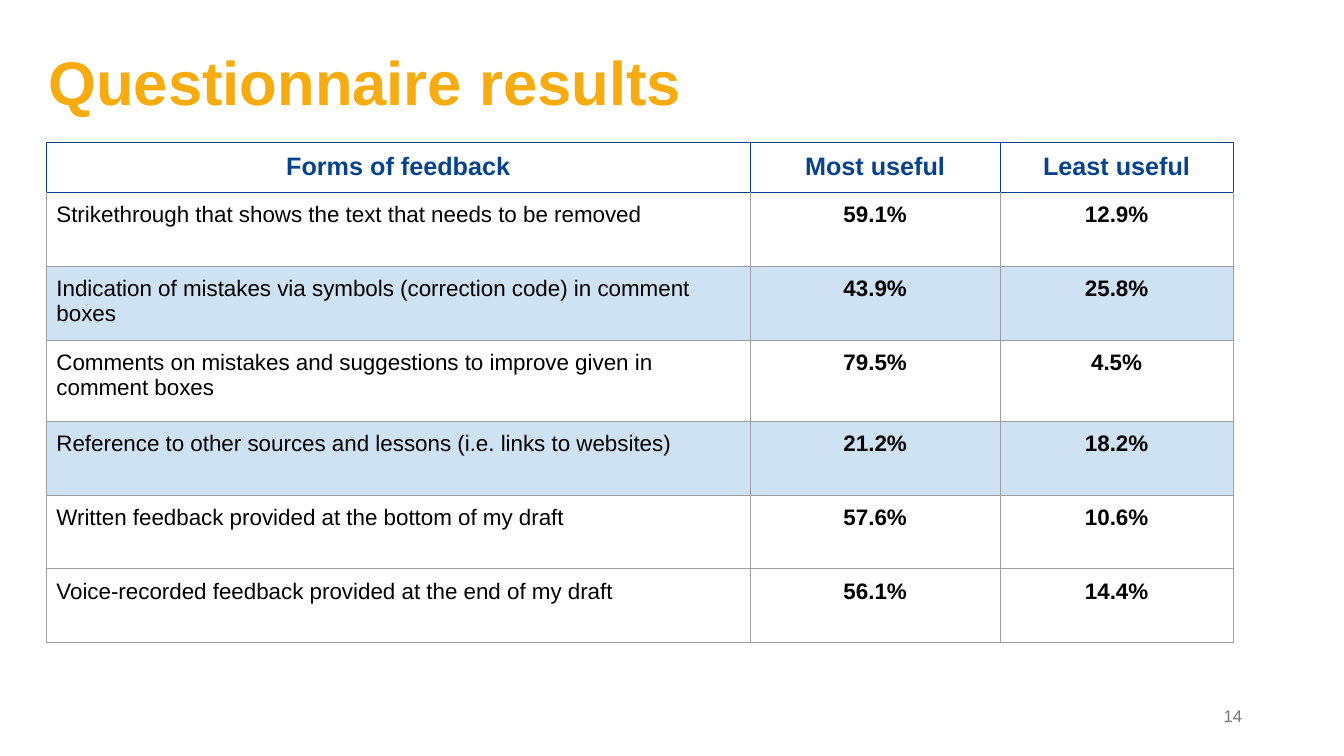
from lxml import etree
from pptx import Presentation
from pptx.dml.color import RGBColor
from pptx.enum.text import MSO_ANCHOR, PP_ALIGN
from pptx.oxml.ns import qn
from pptx.util import Inches, Pt

LEFT, CENTER, RIGHT = PP_ALIGN.LEFT, PP_ALIGN.CENTER, PP_ALIGN.RIGHT
TOP, BOTTOM = MSO_ANCHOR.TOP, MSO_ANCHOR.BOTTOM

TITLE = "Questionnaire results"
PAGE_NUMBER = "14"
RESULTS = [
    ("Forms of feedback", "Most useful", "Least useful"),
    ("Strikethrough that shows the text that needs to be removed", "59.1%", "12.9%"),
    ("Indication of mistakes via symbols (correction code) in comment boxes", "43.9%", "25.8%"),
    ("Comments on mistakes and suggestions to improve given in comment boxes", "79.5%", "4.5%"),
    ("Reference to other sources and lessons (i.e. links to websites)", "21.2%", "18.2%"),
    ("Written feedback provided at the bottom of my draft", "57.6%", "10.6%"),
    ("Voice-recorded feedback provided at the end of my draft", "56.1%", "14.4%"),
]
COLUMN_WIDTHS = [6.98, 2.48, 2.31]
ROW_HEIGHTS = [0.47, 0.73, 0.73, 0.81, 0.73, 0.73, 0.73]
SHADED_ROWS = (2, 4)

WHITE, NAVY, GRAY, BAND = "FFFFFF", "07428C", "9E9E9E", "CFE2F3"
TITLE_FONT = {"name": "Arial", "size": Pt(44), "bold": True}
NUMBER_FONT = {"name": "Arial", "size": Pt(12), "bold": False}
HEADER_FONT = {"name": "Arial", "size": Pt(18), "bold": True}
FORM_FONT = {"name": "Arial", "size": Pt(16), "bold": False}
SHARE_FONT = {**FORM_FONT, "bold": True}


def paint(color_format, hex_color):
    color_format.rgb = RGBColor.from_string(hex_color)


def set_all(target, values):
    for key, value in values.items():
        setattr(target, key, value)


def write(frame, text, font, hex_color, align):
    frame.text = text
    paragraph = frame.paragraphs[0]
    paragraph.alignment = align
    set_all(paragraph.runs[0].font, font)
    paint(paragraph.runs[0].font.color, hex_color)
    return paragraph


def margins(side, end):
    return {"margin_left": Inches(side), "margin_right": Inches(side),
            "margin_top": Inches(end), "margin_bottom": Inches(end)}


def draw_borders(cell, colors):
    properties = cell._tc.get_or_add_tcPr()
    for side, hex_color in colors.items():
        border = etree.SubElement(properties, qn(f"a:ln{side}"), w=str(Pt(0.75)))
        fill = etree.SubElement(border, qn("a:solidFill"))
        etree.SubElement(fill, qn("a:srgbClr"), val=hex_color)


def add_title(slide):
    title = slide.shapes.title
    set_all(title, {"left": Inches(0.38), "top": Inches(0.34),
                    "width": Inches(11.93), "height": Inches(0.94)})
    title.fill.solid()
    paint(title.fill.fore_color, WHITE)
    set_all(title.text_frame, {**margins(0.1, 0.1), "vertical_anchor": BOTTOM})
    heading = write(title.text_frame, TITLE, TITLE_FONT, "F6AC10", LEFT)
    heading.line_spacing = 0.9


def add_page_number(slide):
    number = slide.shapes.add_textbox(Inches(10.19), Inches(6.95), Inches(2.23), Inches(0.4))
    set_all(number.text_frame, {**margins(0.1, 0.05), "word_wrap": True,
                                "vertical_anchor": TOP})
    write(number.text_frame, PAGE_NUMBER, NUMBER_FONT, "767676", RIGHT)


def add_results(slide):
    table = slide.shapes.add_table(
        len(RESULTS), len(COLUMN_WIDTHS), Inches(0.46), Inches(1.41),
        Inches(sum(COLUMN_WIDTHS)), Inches(sum(ROW_HEIGHTS))).table
    set_all(table, {"first_row": False, "horz_banding": False})
    for column, width in zip(table.columns, COLUMN_WIDTHS):
        column.width = Inches(width)
    for row, height in zip(table.rows, ROW_HEIGHTS):
        row.height = Inches(height)
    for r, entries in enumerate(RESULTS):
        edge = NAVY if r == 0 else GRAY
        borders = {"L": edge, "R": edge, "T": NAVY if r < 2 else GRAY, "B": edge}
        for c, entry in enumerate(entries):
            cell = table.cell(r, c)
            set_all(cell, {**margins(0.1, 0.1), "vertical_anchor": TOP})
            if r == 0:
                write(cell.text_frame, entry, HEADER_FONT, NAVY, CENTER)
            else:
                font, align = (SHARE_FONT, CENTER) if c else (FORM_FONT, LEFT)
                write(cell.text_frame, entry, font, "000000", align)
            draw_borders(cell, borders)
            if r in SHADED_ROWS:
                cell.fill.solid()
                paint(cell.fill.fore_color, BAND)
            else:
                cell.fill.background()


def main():
    deck = Presentation()
    set_all(deck, {"slide_width": Inches(13.33), "slide_height": Inches(7.5)})
    slide = deck.slides.add_slide(deck.slide_layouts.get_by_name("Title Only"))
    add_title(slide)
    add_page_number(slide)
    add_results(slide)
    deck.save("out.pptx")


if __name__ == "__main__":
    main()
